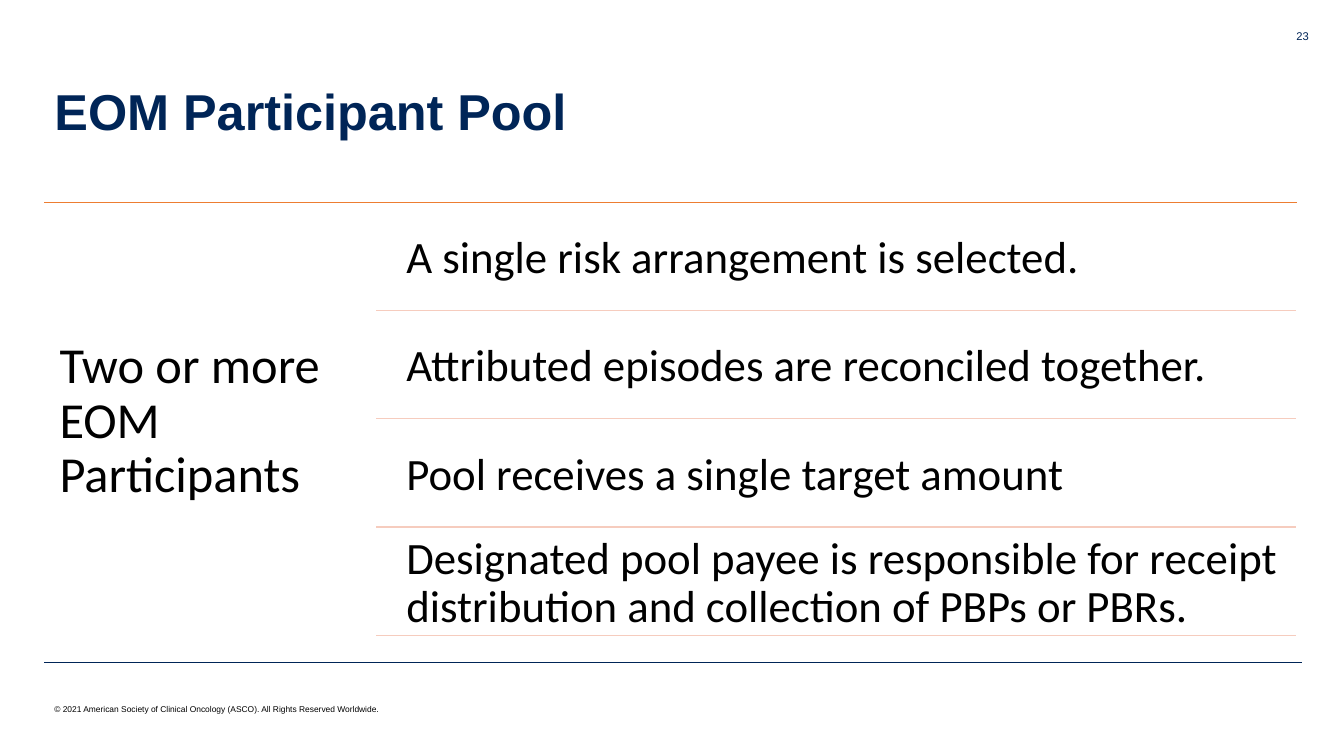
import dataclasses

import pptx
import pptx.dml.color
import pptx.enum.shapes
import pptx.enum.text
import pptx.oxml.ns
import pptx.util
from pptx.util import Inches

COLORS = {"navy": "002557", "orange": "ED7D31", "pink": "F6CCBE", "black": "000000"}
ALIGN = pptx.enum.text.PP_ALIGN
ANCHOR = pptx.enum.text.MSO_ANCHOR

ROWS = [
    "A single risk arrangement is selected.",
    "Attributed episodes are reconciled together.",
    "Pool receives a single target amount",
    "Designated pool payee is responsible for receipt distribution and collection of PBPs or PBRs.",
]
TOP = 2.06
STEP = 1.075
ROW_H = 1.02


@dataclasses.dataclass
class Label:
    text: str
    left: float
    top: float
    width: float
    height: float
    size: float
    font: str = "Arial"
    color: str = "black"
    bold: bool = False
    align: ALIGN = ALIGN.LEFT
    anchor: ANCHOR = ANCHOR.MIDDLE
    side: float = 0.1
    edge: float = 0.05
    line: float = 1.0


@dataclasses.dataclass
class Rule:
    left: float
    right: float
    y: float
    color: str
    width: float = 1


def rgb(name: str) -> pptx.dml.color.RGBColor:
    return pptx.dml.color.RGBColor.from_string(COLORS[name])


def apply(target: object, values: dict) -> None:
    for name, value in values.items():
        setattr(target, name, value)


def fill_label(shape, label: Label) -> None:
    """Place a text box or placeholder and format its text."""
    apply(shape, {
        "left": Inches(label.left), "top": Inches(label.top),
        "width": Inches(label.width), "height": Inches(label.height),
    })
    frame = shape.text_frame
    frame.text = label.text
    apply(frame, {
        "word_wrap": True, "auto_size": pptx.enum.text.MSO_AUTO_SIZE.NONE,
        "vertical_anchor": label.anchor,
        "margin_left": Inches(label.side), "margin_right": Inches(label.side),
        "margin_top": Inches(label.edge), "margin_bottom": Inches(label.edge),
    })
    para = frame.paragraphs[0]
    apply(para, {"alignment": label.align, "line_spacing": label.line})
    font = para.runs[0].font
    apply(font, {"name": label.font, "size": pptx.util.Pt(label.size), "bold": label.bold})
    font.color.rgb = rgb(label.color)


def draw_label(slide, label: Label) -> None:
    fill_label(slide.shapes.add_textbox(0, 0, 0, 0), label)


def draw_rule(slide, rule: Rule) -> None:
    y = Inches(rule.y)
    line = slide.shapes.add_connector(
        pptx.enum.shapes.MSO_CONNECTOR.STRAIGHT, Inches(rule.left), y, Inches(rule.right), y)
    line.line.color.rgb = rgb(rule.color)
    line.line.width = pptx.util.Pt(rule.width)
    props = line._element.spPr
    props.append(props.makeelement(pptx.oxml.ns.qn("a:effectLst"), {}))


def main() -> None:
    deck = pptx.Presentation()
    apply(deck, {"slide_width": Inches(13.33), "slide_height": Inches(7.5)})
    slide = deck.slides.add_slide(deck.slide_layouts.get_by_name("Title Only"))

    fill_label(slide.shapes.title, Label(
        "EOM Participant Pool", 0.44, 0.41, 11.5, 1.45, 36,
        color="navy", bold=True, line=0.9))
    draw_rule(slide, Rule(0.44, 12.91, 6.57, "navy", 0.25))
    draw_label(slide, Label(
        "© 2021 American Society of Clinical Oncology (ASCO). All Rights Reserved Worldwide.",
        0.44, 6.84, 4.5, 0.4, 6))
    draw_label(slide, Label(
        "23", 12.14, 0.24, 0.94, 0.4, 8, color="navy",
        align=ALIGN.RIGHT, anchor=ANCHOR.TOP))

    draw_rule(slide, Rule(0.44, 12.86, 2.01, "orange"))
    draw_label(slide, Label(
        "Two or more EOM Participants", 0.44, 2.01, 3.29, 4.35, 36,
        font="Calibri", side=0.15, edge=0.15, line=0.9))
    for index, text in enumerate(ROWS):
        top = TOP + index * STEP
        draw_label(slide, Label(
            text, 3.9, top, 8.95, ROW_H, 32,
            font="Calibri", side=0.13, edge=0.13, line=0.9))
        draw_rule(slide, Rule(3.73, 12.85, top + ROW_H, "pink"))

    deck.save("out.pptx")


if __name__ == "__main__":
    main()
